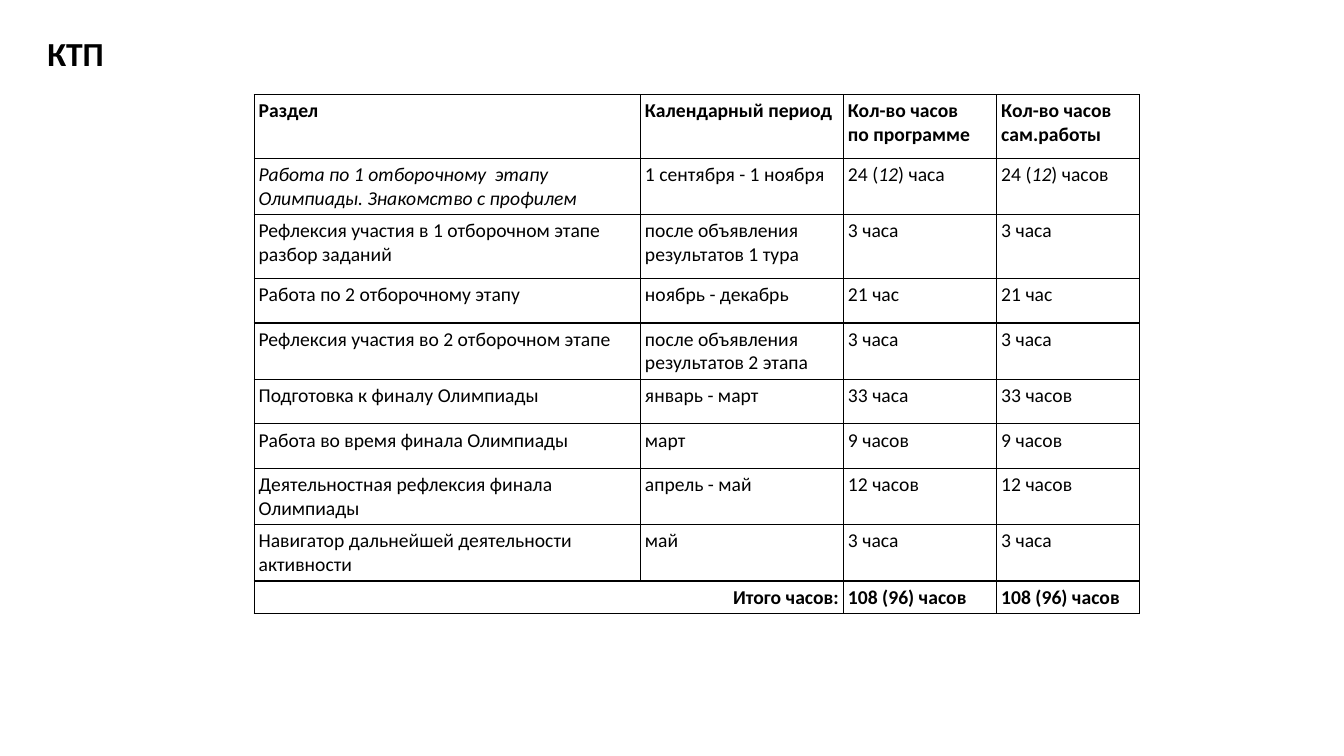
from lxml.etree import SubElement
from pptx import Presentation
from pptx.dml.color import RGBColor
from pptx.enum.text import MSO_ANCHOR as Anchor, MSO_AUTO_SIZE as AutoSize, PP_ALIGN as Align
from pptx.oxml import parse_xml
from pptx.oxml.ns import nsdecls, qn
from pptx.util import Pt

BLACK = "000000"
COLUMN_WIDTHS = [276, 145, 109.5, 102]
ROW_HEIGHTS = [45.36, 40.32, 45.36, 32, 36.72, 32, 32, 32, 33.84, 20.16]
HEADER = ["Раздел", "Календарный период", "Кол-во часов\nпо программе", "Кол-во часов сам.работы"]
SECTIONS = [
    ["*Работа по 1 отборочному  этапу Олимпиады. Знакомство с профилем*",
     "1 сентября - 1 ноября", "24 (*12*) часа", "24 (*12*) часов"],
    ["Рефлексия участия в 1 отборочном этапе разбор заданий",
     "после объявления результатов 1 тура", "3 часа", "3 часа"],
    ["Работа по 2 отборочному этапу", "ноябрь - декабрь", "21 час", "21 час"],
    ["Рефлексия участия во 2 отборочном этапе",
     "после объявления результатов 2 этапа", "3 часа", "3 часа"],
    ["Подготовка к финалу Олимпиады", "январь - март", "33 часа", "33 часов"],
    ["Работа во время финала Олимпиады", "март", "9 часов", "9 часов"],
    ["Деятельностная рефлексия финала Олимпиады", "апрель - май", "12 часов", "12 часов"],
    ["Навигатор дальнейшей деятельности активности", "май", "3 часа", "3 часа"],
]
TOTAL = ["Итого часов:", "", "108 (96) часов", "108 (96) часов"]


def color(value):
    """Turn a hex string into a colour."""
    return RGBColor.from_string(value)


def set_values(target, values):
    """Set attributes of an object from a dict."""
    for name, value in values.items():
        setattr(target, name, value)


def style_font(font, size, bold=False, italic=False):
    """Format a font in the slide's typeface."""
    set_values(font, {"name": "Calibri", "size": Pt(size), "bold": bold, "italic": italic})
    font.color.rgb = color(BLACK)


def write_text(text_frame, text, size, bold=False, align=Align.LEFT):
    """Write lines of text, with italics between asterisks."""
    for number, line in enumerate(text.split("\n")):
        paragraph = text_frame.add_paragraph() if number else text_frame.paragraphs[0]
        paragraph.alignment = align
        for part, words in enumerate(line.split("*")):
            if words:
                run = paragraph.add_run()
                run.text = words
                style_font(run.font, size, bold, italic=part % 2 == 1)


def add_borders(cell, width=1):
    """Draw a solid line on all four sides of a cell."""
    properties = cell._tc.get_or_add_tcPr()
    for position, side in enumerate("LRTB"):
        line = parse_xml(f'<a:ln{side} {nsdecls("a")} w="{Pt(width)}"/>')
        fill = SubElement(line, qn("a:solidFill"))
        SubElement(fill, qn("a:srgbClr"), val=BLACK)
        properties.insert(position, line)


def format_cell(cell):
    """Give a cell its margins, borders and empty fill."""
    sides = ("left", "right", "top", "bottom")
    set_values(cell, {f"margin_{side}": Pt(3.25) for side in sides})
    cell.vertical_anchor = Anchor.TOP
    cell.fill.background()
    add_borders(cell)


def add_title(slide, text):
    """Fill and place the title placeholder."""
    title = slide.shapes.title
    set_values(title, {"left": Pt(26.64), "top": Pt(20.16), "width": Pt(124.56), "height": Pt(36)})
    set_values(title.text_frame, {"word_wrap": True, "auto_size": AutoSize.SHAPE_TO_FIT_TEXT,
                                  "vertical_anchor": Anchor.TOP})
    write_text(title.text_frame, text, 24, bold=True)


def add_plan_table(slide):
    """Add the calendar plan with its header and total rows."""
    rows = [HEADER, *SECTIONS, TOTAL]
    frame = slide.shapes.add_table(len(rows), len(HEADER), Pt(181.5), Pt(67.68),
                                   Pt(sum(COLUMN_WIDTHS)), Pt(sum(ROW_HEIGHTS)))
    table = frame.table
    set_values(table, {"first_row": False, "horz_banding": False})
    for column, width in zip(table.columns, COLUMN_WIDTHS):
        column.width = Pt(width)
    last = len(rows) - 1
    for row_number, (texts, height) in enumerate(zip(rows, ROW_HEIGHTS)):
        table.rows[row_number].height = Pt(height)
        for column_number, text in enumerate(texts):
            cell = table.cell(row_number, column_number)
            format_cell(cell)
            align = Align.RIGHT if (row_number, column_number) == (last, 0) else Align.LEFT
            write_text(cell.text_frame, text, 14, row_number in (0, last), align)
    table.cell(last, 0).merge(table.cell(last, 1))


def main():
    """Build the slide and save it."""
    presentation = Presentation()
    set_values(presentation, {"slide_width": Pt(960), "slide_height": Pt(540)})
    slide = presentation.slides.add_slide(presentation.slide_layouts[5])
    add_title(slide, "КТП")
    add_plan_table(slide)
    presentation.save("out.pptx")


if __name__ == "__main__":
    main()
